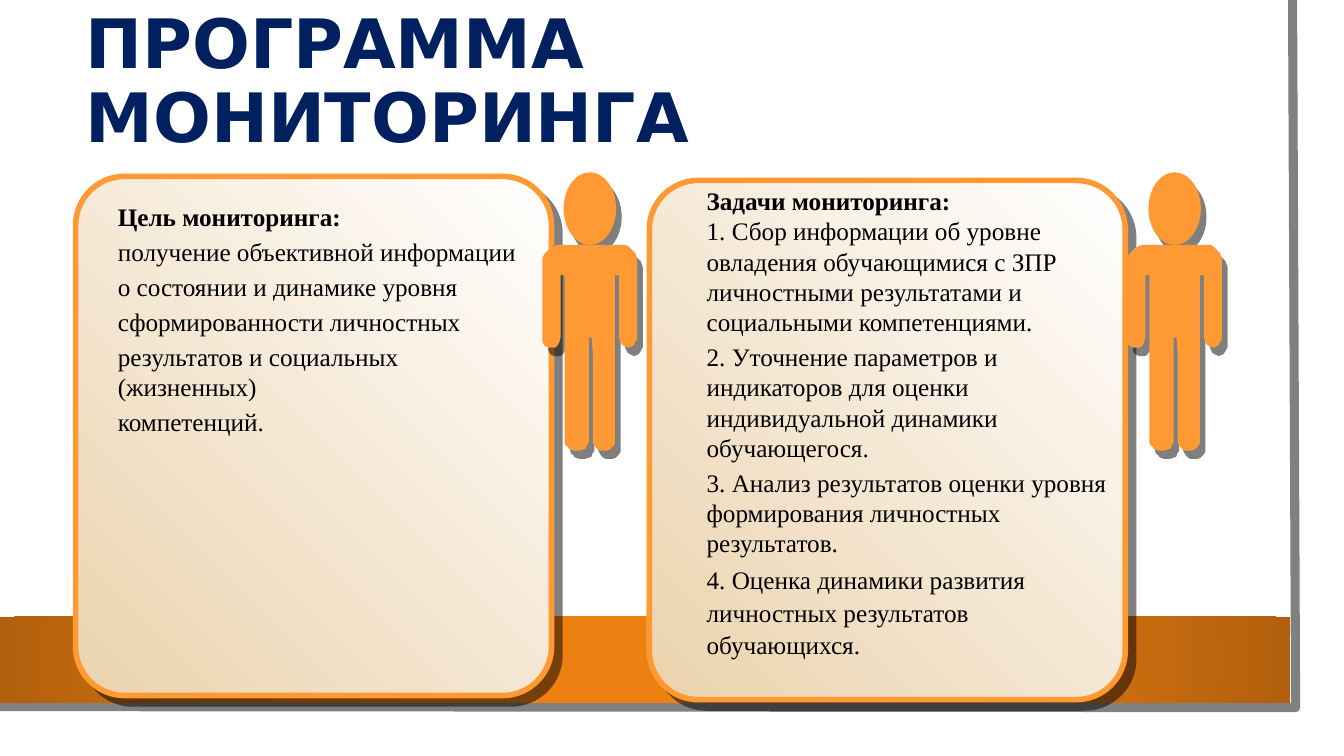
from pptx import Presentation
from pptx.dml.color import RGBColor
from pptx.enum.shapes import MSO_SHAPE
from pptx.enum.text import MSO_ANCHOR, MSO_AUTO_SIZE
from pptx.oxml import parse_xml
from pptx.oxml.ns import nsdecls, qn
from pptx.util import Pt

RECT, ROUND, OVAL = MSO_SHAPE.RECTANGLE, MSO_SHAPE.ROUNDED_RECTANGLE, MSO_SHAPE.OVAL
MIDDLE = MSO_ANCHOR.MIDDLE
GROW = MSO_AUTO_SIZE.SHAPE_TO_FIT_TEXT

PX = 9144
ORANGE, NAVY, GRAY, BLACK, WHITE = "FF9933", "002060", "808080", "000000", "FFFFFF"
SLANT = '<a:lin ang="18900000" scaled="0"/>'
RADIAL = '<a:path path="circle"><a:fillToRect l="50000" t="50000" r="50000" b="50000"/></a:path>'

BODY = [
    (15, 0), (12, 1), (8, 3), (5, 6), (2, 9), (0, 13), (0, 96), (1, 98), (2, 100),
    (4, 101), (6, 102), (12, 102), (14, 101), (15, 100), (16, 98), (17, 96), (18, 92),
    (18, 30), (22, 30), (22, 196), (23, 199), (25, 200), (26, 202), (28, 203), (31, 204),
    (37, 204), (40, 203), (43, 202), (44, 199), (46, 196), (46, 92), (49, 92), (50, 108),
    (50, 196), (51, 198), (53, 201), (55, 203), (57, 204), (64, 204), (67, 203), (70, 200),
    (72, 197), (72, 30), (76, 30), (76, 92), (77, 95), (79, 99), (81, 100), (83, 101),
    (85, 102), (88, 101), (90, 100), (92, 97), (94, 93), (94, 14), (92, 8), (89, 5),
    (86, 2), (83, 0), (79, 0),
]

GOAL = [
    "Цель мониторинга:",
    "получение объективной информации",
    "о состоянии и динамике уровня",
    "сформированности личностных",
    "результатов и социальных (жизненных)",
    "компетенций.",
]
TASKS = [
    "Задачи мониторинга:",
    "1. Сбор информации об уровне овладения обучающимися с ЗПР личностными "
    "результатами и социальными компетенциями.",
    "2. Уточнение параметров и индикаторов для оценки индивидуальной динамики обучающегося.",
    "3. Анализ результатов оценки уровня формирования личностных результатов.",
    "4. Оценка динамики развития личностных результатов обучающихся.",
]


def color(code):
    return RGBColor.from_string(code)


class Board:
    """Draws styled elements on one slide, with lengths in px."""

    def __init__(self, slide):
        self.shapes = slide.shapes

    def style(self, shape, fill=None, line=None, width=0, shade=None):
        if fill:
            shape.fill.solid()
            shape.fill.fore_color.rgb = color(fill)
        if line:
            shape.line.color.rgb = color(line)
            shape.line.width = Pt(width)
        else:
            shape.line.fill.background()
        shape.shadow.inherit = False
        if shade:
            dist, angle = shade
            effects = shape._element.spPr.find(qn("a:effectLst"))
            effects.append(parse_xml(
                f'<a:outerShdw {nsdecls("a")} blurRad="0" dist="{Pt(dist)}" '
                f'dir="{angle * 60000}" algn="ctr" rotWithShape="0"><a:srgbClr val="{BLACK}">'
                '<a:alpha val="50000"/></a:srgbClr></a:outerShdw>'))

    def shape(self, kind, box, blend=None, bend=None, **look):
        shape = self.shapes.add_shape(kind, *(n * PX for n in box))
        if bend:
            shape.adjustments[0] = bend
        if blend:
            stops, course = blend
            marks = "".join(f'<a:gs pos="{at * 1000}"><a:srgbClr val="{code}"/></a:gs>'
                            for at, code in stops)
            shape._element.spPr.append(parse_xml(
                f'<a:gradFill {nsdecls("a")} rotWithShape="1">'
                f'<a:gsLst>{marks}</a:gsLst>{course}</a:gradFill>'))
        self.style(shape, **look)

    def outline(self, points, close=True, **look):
        pen = self.shapes.build_freeform(*points[0], scale=PX)
        pen.add_line_segments(points[1:], close=close)
        shape = pen.convert_to_shape()
        if not close:
            shape.fill.background()
        self.style(shape, **look)

    def panel(self, left, top):
        blend = [(0, "EBD3AD"), (100, WHITE)], SLANT
        self.shape(ROUND, (left, top, 472, 515), blend, 0.103,
                   line=ORANGE, width=4, shade=(8.5, 45))

    def person(self, left, top):
        look = {"fill": ORANGE, "shade": (7.2, 56)}
        self.shape(OVAL, (left + 21, top, 52, 72), **look)
        self.outline([(left + x, top + 72 + y) for x, y in BODY], **look)

    def frame(self, box):
        frame = self.shapes.add_textbox(*(n * PX for n in box)).text_frame
        frame.word_wrap = True
        return frame

    def font(self, para, name, size, code, bold):
        font = para.font
        font.name, font.size, font.bold = name, Pt(size), bold
        font.color.rgb = color(code)

    def title(self, box, lines):
        frame = self.frame(box)
        frame.vertical_anchor = MIDDLE
        para = frame.paragraphs[0]
        para.line_spacing = 0.9
        for i, line in enumerate(lines):
            if i:
                para.add_line_break()
            para.add_run().text = line
        self.font(para, "DejaVu Sans", 48.6, NAVY, True)

    def text(self, box, lines, first_gap=3.4):
        frame = self.frame(box)
        frame.auto_size = GROW
        for i, line in enumerate(lines):
            para = frame.add_paragraph() if i else frame.paragraphs[0]
            para.text = line
            para.space_after = Pt(3.4 if i else first_gap)
            self.font(para, "Times New Roman", 18, BLACK, i == 0)
        return para


def main():
    deck = Presentation()
    deck.slide_width, deck.slide_height = 1333 * PX, 750 * PX
    board = Board(deck.slides.add_slide(deck.slide_layouts[6]))

    board.shape(RECT, (0, 0, 1310, 727), fill=WHITE)
    board.outline([(1282, 0), (1285, 702), (-3, 701)], close=False, line=GRAY, width=6.5)
    board.shape(RECT, (0, 612, 1280, 85), ([(34, "EE8011"), (100, "B2600D")], RADIAL))
    board.title((75, 20, 1137, 126), ["ПРОГРАММА", "МОНИТОРИНГА"])

    for left, top, side in (75, 175, 538), (644, 179, 1118):
        board.panel(left, top)
        board.person(side, 171)

    last = board.text((691, 179, 425, 483), TASKS, first_gap=0)
    last.line_spacing = 1.07
    last.space_after = Pt(8)
    board.text((107, 195, 418, 243), GOAL)
    deck.save("out.pptx")


if __name__ == "__main__":
    main()
